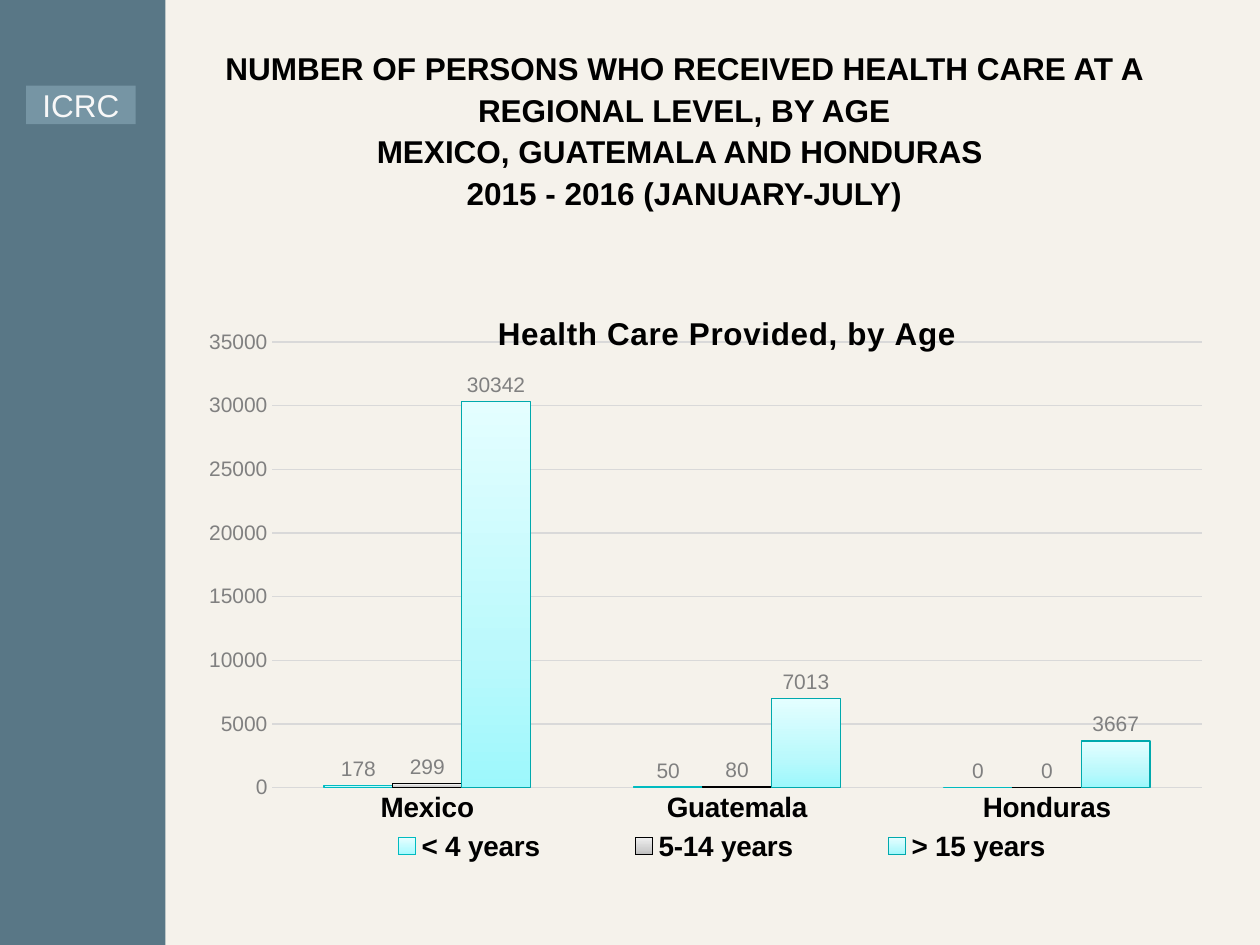
"""Build a slide with a column chart of health care provided by age group."""
from copy import deepcopy
from dataclasses import dataclass

from lxml.etree import SubElement
from pptx import Presentation
from pptx.chart.data import CategoryChartData
from pptx.dml.color import RGBColor
from pptx.enum.chart import XL_CHART_TYPE, XL_LABEL_POSITION, XL_LEGEND_POSITION, XL_TICK_MARK
from pptx.enum.shapes import MSO_SHAPE
from pptx.enum.text import MSO_ANCHOR, MSO_AUTO_SIZE, PP_ALIGN
from pptx.oxml.ns import qn
from pptx.util import Pt

FONT = "Arial"
HUES = {"back": "F5F2EB", "band": "597786", "tag": "7695A4", "pale": "F8F8F8",
        "ink": "000000", "gray": "808080", "grid": "D9D9D9"}
STOPS = (0, 0.35, 1)


@dataclass
class Group:
    name: str
    vals: tuple
    fades: tuple
    edge: str


@dataclass
class Box:
    left: float
    top: float
    width: float
    height: float

    def points(self) -> tuple:
        return Pt(self.left), Pt(self.top), Pt(self.width), Pt(self.height)


GROUPS = [
    Group("< 4 years", (178, 50, 0), ("A2FAFF", "BDFBFF", "E6FEFF"), "00BBC0"),
    Group("5-14 years", (299, 80, 0), ("BDBDBD", "D1D1D1", "EEEEEE"), "000000"),
    Group("> 15 years", (30342, 7013, 3667), ("9DF8FC", "BBF9FC", "E4FEFF"), "00A9AD"),
]


def rgb(code: str) -> RGBColor:
    return RGBColor.from_string(code)


def style(font, size: float, hue: str, bold: bool = False) -> None:
    font.name, font.size, font.bold = FONT, Pt(size), bold
    font.color.rgb = rgb(HUES[hue])


def rule(line, code: str) -> None:
    line.color.rgb = rgb(code)
    line.width = Pt(0.75)


def block(slide, box: Box, hue: str):
    shape = slide.shapes.add_shape(MSO_SHAPE.RECTANGLE, *box.points())
    shape.shadow.inherit = False
    shape.fill.solid()
    shape.fill.fore_color.rgb = rgb(HUES[hue])
    shape.line.fill.background()
    return shape


def place(node, index: int, **marks) -> None:
    for old in node.findall(qn("c:layout")):
        node.remove(old)
    layout = SubElement(node, qn("c:layout"))
    node.insert(index, layout)
    manual = SubElement(layout, qn("c:manualLayout"))
    for tag, val in marks.items():
        SubElement(manual, qn(f"c:{tag}")).set("val", str(val))


def paint(series, group: Group) -> None:
    series.invert_if_negative = False
    fill = series.format.fill
    fill.gradient()
    fill.gradient_angle = 90
    stops = series._element.find(".//" + qn("a:gsLst"))
    stops.append(deepcopy(stops[-1]))
    for stop, spot, code in zip(fill.gradient_stops, STOPS, group.fades):
        stop.position = spot
        stop.color.rgb = rgb(code)
    rule(series.format.line, group.edge)
    labels = series.data_labels
    labels.show_value = True
    labels.position = XL_LABEL_POSITION.OUTSIDE_END
    style(labels.font, 12, "gray")


def draw_axes(chart) -> None:
    cats, vals = chart.category_axis, chart.value_axis
    for axis in (cats, vals):
        axis.major_tick_mark = axis.minor_tick_mark = XL_TICK_MARK.NONE
    style(cats.tick_labels.font, 16, "ink", True)
    rule(cats.format.line, HUES["grid"])
    style(vals.tick_labels.font, 12, "gray")
    vals.minimum_scale, vals.maximum_scale, vals.major_unit = 0, 35000, 5000
    vals.format.line.fill.background()
    rule(vals.major_gridlines.format.line, HUES["grid"])


def draw_chart(slide, box: Box) -> None:
    data = CategoryChartData(number_format="0")
    data.categories = ["Mexico", "Guatemala", "Honduras"]
    for group in GROUPS:
        data.add_series(group.name, group.vals)
    chart = slide.shapes.add_chart(XL_CHART_TYPE.COLUMN_CLUSTERED, *box.points(), data).chart
    style(chart.font, 10, "ink")
    plot = chart.plots[0]
    plot.gap_width, plot.overlap, plot.vary_by_categories = 150, 0, False
    for series, group in zip(plot.series, GROUPS):
        paint(series, group)
    draw_axes(chart)

    title = chart.chart_title
    title.include_in_layout = True
    para = title.text_frame.paragraphs[0]
    run = para.add_run()
    run.text = "Health Care Provided, by Age"
    style(run.font, 18, "ink", True)
    run.font._element.set("spc", "40")
    place(title._element, 1, xMode="edge", yMode="edge", x=0.28, y=0.04)

    chart.has_legend = True
    legend = chart.legend
    legend.position = XL_LEGEND_POSITION.BOTTOM
    legend.include_in_layout = False
    style(legend.font, 16, "ink", True)
    place(legend._element, 1, xMode="edge", yMode="edge", x=0.1, y=0.92, w=0.82, h=0.08)

    area = chart._chartSpace.find(".//" + qn("c:plotArea"))
    place(area, 0, layoutTarget="inner", xMode="edge", yMode="edge",
          x=0.06, y=0.1, w=0.93, h=0.76)


def draw_title(slide, box: Box) -> None:
    title = slide.shapes.title
    title.left, title.top, title.width, title.height = box.points()
    frame = title.text_frame
    frame.word_wrap, frame.auto_size = True, MSO_AUTO_SIZE.NONE
    frame.vertical_anchor = MSO_ANCHOR.MIDDLE
    frame.text = ("NUMBER OF PERSONS WHO RECEIVED HEALTH CARE AT A REGIONAL LEVEL, BY AGE\v"
                  "MEXICO, GUATEMALA AND HONDURAS \v2015 - 2016 (JANUARY-JULY)")
    para = frame.paragraphs[0]
    para.alignment, para.line_spacing = PP_ALIGN.CENTER, 1.1
    style(para.font, 18, "ink", True)


def draw_tag(slide, box: Box) -> None:
    frame = block(slide, box, "tag").text_frame
    frame.vertical_anchor = MSO_ANCHOR.MIDDLE
    frame.text = "ICRC"
    para = frame.paragraphs[0]
    para.alignment = PP_ALIGN.CENTER
    style(para.font, 18, "pale")


def main() -> None:
    deck = Presentation()
    deck.slide_width, deck.slide_height = Pt(720), Pt(540)
    slide = deck.slides.add_slide(deck.slide_layouts[5])
    slide.background.fill.solid()
    slide.background.fill.fore_color.rgb = rgb(HUES["back"])
    block(slide, Box(0, 0, 94.5, 540), "band")
    draw_title(slide, Box(104, 60.5, 574, 26))
    draw_chart(slide, Box(119.5, 162, 573, 335))
    draw_tag(slide, Box(15, 49, 62.5, 22))
    deck.save("out.pptx")


if __name__ == "__main__":
    main()
